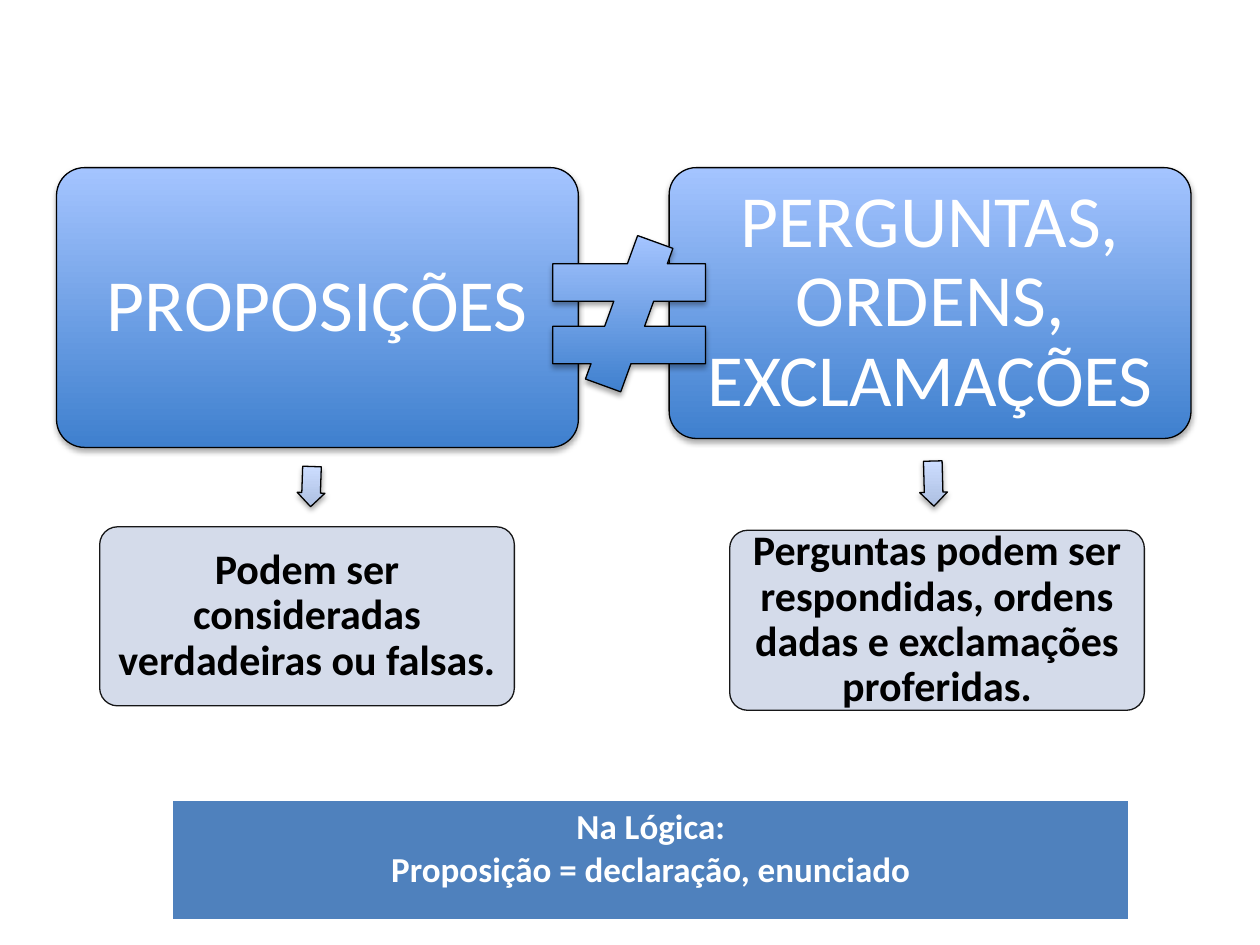
"""Build the slide that contrasts propositions with questions, orders and exclamations."""
from lxml import etree
from pptx import Presentation
from pptx.dml.color import RGBColor
from pptx.enum.shapes import MSO_SHAPE
from pptx.enum.text import MSO_ANCHOR, PP_ALIGN
from pptx.oxml import parse_xml
from pptx.oxml.ns import nsdecls, qn
from pptx.util import Cm, Pt

ROUND = MSO_SHAPE.ROUNDED_RECTANGLE
ARROW = MSO_SHAPE.RIGHT_ARROW
NOT_EQUAL = MSO_SHAPE.MATH_NOT_EQUAL
MIDDLE = MSO_ANCHOR.MIDDLE
CENTER = PP_ALIGN.CENTER

THEME = {
    "font": "Calibri",
    "black": RGBColor.from_string("000000"),
    "white": RGBColor.from_string("FFFFFF"),
    "pale": RGBColor.from_string("D0D8E8"),
    "band": RGBColor.from_string("4F81BD"),
    "strong": ("3F80CE", "A4C4FF"),
    "soft": ("ADBFE1", "CCDDFF"),
    "line": Pt(0.75),
}
HEADING = {"name": THEME["font"], "size": Pt(42), "bold": False, "color": THEME["white"]}
DETAIL = {"name": THEME["font"], "size": Pt(24), "bold": True, "color": THEME["black"]}
NOTE = {"name": THEME["font"], "size": Pt(20), "bold": True, "color": THEME["white"]}
SHADOW = (
    f'<a:effectLst {nsdecls("a")}><a:outerShdw blurRad="40000" dist="23000" dir="5400000" '
    'rotWithShape="0"><a:srgbClr val="000000"><a:alpha val="35000"/></a:srgbClr>'
    "</a:outerShdw></a:effectLst>"
)


def add_part(kind, box, adj, gradient=None, rotation=0):
    sp = s.shapes.add_shape(kind, *map(Cm, box))
    for i, value in enumerate(adj):
        sp.adjustments[i] = value
    sp.rotation = rotation
    sp.shadow.inherit = False
    sp.line.color.rgb = THEME["black"]
    sp.line.width = THEME["line"]
    spPr = sp.element.spPr
    if gradient:
        sp.fill.gradient()
        sp.fill.gradient_angle = 90
        for stop, color in zip(sp.fill.gradient_stops, gradient):
            stop.color.rgb = RGBColor.from_string(color)
        spPr.find(qn("a:gradFill")).set("rotWithShape", "0")
        spPr.replace(spPr.find(qn("a:effectLst")), parse_xml(SHADOW))
    else:
        sp.fill.solid()
        sp.fill.fore_color.rgb = THEME["pale"]
        for color in spPr.iter(qn("a:srgbClr")):
            etree.SubElement(color, qn("a:alpha")).set("val", "90000")
    return sp


def write(tf, lines, style, spacing=None):
    for i, line in enumerate(lines):
        p = tf.paragraphs[0] if i == 0 else tf.add_paragraph()
        p.alignment = CENTER
        p.line_spacing = spacing
        r = p.add_run()
        r.text = line
        for key, value in style.items():
            if key == "color":
                r.font.color.rgb = value
            else:
                setattr(r.font, key, value)


prs = Presentation()
prs.slide_width, prs.slide_height = Cm(25.4), Cm(19.05)
s = prs.slides.add_slide(prs.slide_layouts[6])

columns = [
    {
        "heading": ("PROPOSIÇÕES", (1.14, 3.38, 10.52, 5.64)),
        "arrow": ((5.87, 9.53, 0.81, 0.56), 92),
        "detail": ("Podem ser consideradas verdadeiras ou falsas.", (2.01, 10.62, 8.36, 3.61)),
    },
    {
        "heading": ("PERGUNTAS, ORDENS, EXCLAMAÇÕES", (13.49, 3.38, 10.52, 5.46)),
        "arrow": ((18.36, 9.47, 0.91, 0.56), 88.5),
        "detail": (
            "Perguntas podem ser respondidas, ordens dadas e exclamações proferidas.",
            (14.71, 10.69, 8.36, 3.63),
        ),
    },
]
for column in columns:
    box, rotation = column["arrow"]
    add_part(ARROW, box, [0.67, 0.5], THEME["soft"], rotation)
    for part, style, gradient, inset in (
        ("heading", HEADING, THEME["strong"], 0.15),
        ("detail", DETAIL, None, 0.08),
    ):
        text, box = column[part]
        tf = add_part(ROUND, box, [0.1], gradient).text_frame
        tf.word_wrap = True
        tf.vertical_anchor = MIDDLE
        for side in ("left", "top", "right", "bottom"):
            setattr(tf, f"margin_{side}", Cm(inset))
        write(tf, [text], style, 0.9)

add_part(NOT_EQUAL, (10.59, 4.75, 4.19, 3.15), [0.24, 66, 0.16], THEME["strong"])

table = s.shapes.add_table(1, 1, Cm(3.48), Cm(16.13), Cm(19.28), Cm(2.44)).table
table.first_row = table.horz_banding = False
cell = table.cell(0, 0)
cell.fill.solid()
cell.fill.fore_color.rgb = THEME["band"]
write(cell.text_frame, ["Na Lógica:", "Proposição = declaração, enunciado"], NOTE)
tcPr = cell._tc.get_or_add_tcPr()
for i, (side, width) in enumerate((("L", 1), ("R", 1), ("T", 1), ("B", 3))):
    tcPr.insert(i, parse_xml(
        f'<a:ln{side} {nsdecls("a")} w="{Pt(width)}"><a:solidFill>'
        f'<a:srgbClr val="{THEME["white"]}"/></a:solidFill></a:ln{side}>'
    ))

prs.save("out.pptx")
